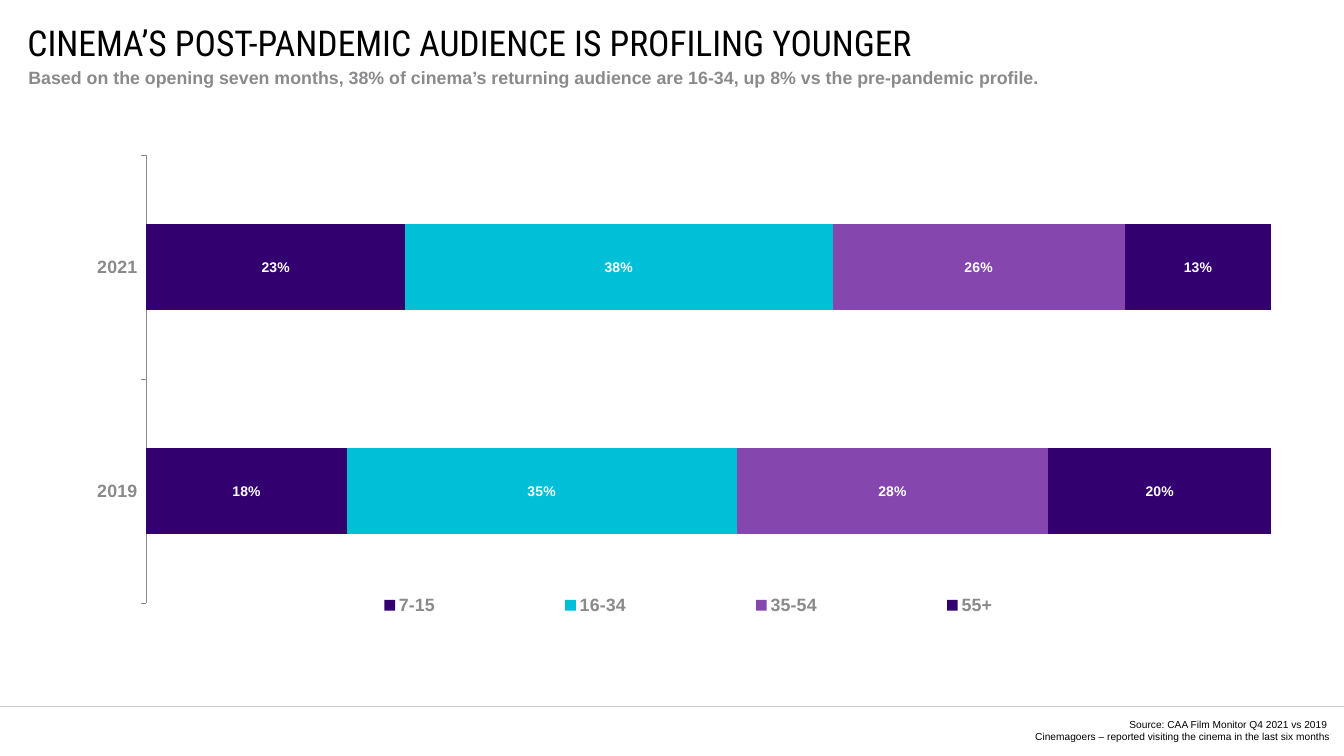
"""Build the slide on the age profile of the cinema audience."""
from lxml import etree
from pptx import Presentation
from pptx.chart.data import CategoryChartData
from pptx.dml.color import RGBColor
from pptx.enum.chart import XL_CHART_TYPE, XL_LEGEND_POSITION, XL_TICK_MARK
from pptx.enum.shapes import MSO_CONNECTOR
from pptx.enum.text import MSO_ANCHOR, PP_ALIGN
from pptx.oxml import parse_xml
from pptx.oxml.ns import nsdecls, qn
from pptx.util import Pt

BAR, BOTTOM = XL_CHART_TYPE.BAR_STACKED_100, XL_LEGEND_POSITION.BOTTOM
TICK_OUT, TICK_NONE = XL_TICK_MARK.OUTSIDE, XL_TICK_MARK.NONE
TOP, MIDDLE = MSO_ANCHOR.TOP, MSO_ANCHOR.MIDDLE
LEFT, RIGHT = PP_ALIGN.LEFT, PP_ALIGN.RIGHT

PX = 9144
SLIDE = (1470, 827)
TITLE = "CINEMA’S POST-PANDEMIC AUDIENCE IS PROFILING YOUNGER"
SUBTITLE = ("Based on the opening seven months, 38% of cinema’s returning audience "
            "are 16-34, up 8% vs the pre-pandemic profile.")
SOURCE = ["Source: CAA Film Monitor Q4 2021 vs 2019 ",
          "Cinemagoers – reported visiting the cinema in the last six months"]
YEARS = ["2021", "2019"]
AGES = [("7-15", (0.23, 0.18), "indigo"), ("16-34", (0.38, 0.35), "cyan"),
        ("35-54", (0.26, 0.28), "purple"), ("55+", (0.13, 0.20), "indigo")]
BOXES = {"title": (30, 30, 1358, 32), "subtitle": (31, 73, 1328, 48),
         "source": (737, 786, 718, 27), "chart": (19, 153, 1398, 599)}
RULE_Y = 773
PLOT = (0.101, 0.028, 0.88, 0.818)
LEGEND = (0.19, 0.82, 0.67, 0.06)

THEME = {
    "colors": {"black": "000000", "grey": "8A8A8D", "rule": "CAC8C8", "white": "FFFFFF",
               "indigo": "33006F", "cyan": "00BFD6", "purple": "8547AD"},
    "fonts": {
        "title": {"name": "Roboto Condensed", "size": Pt(28), "bold": False, "color": "black"},
        "subtitle": {"name": "Arial", "size": Pt(14), "bold": True, "color": "grey"},
        "source": {"name": "Arial", "size": Pt(8), "bold": False, "color": "black"},
        "chart": {"name": "Arial", "size": Pt(10), "bold": False, "color": "black"},
        "axis": {"name": "Arial", "size": Pt(14), "bold": True, "color": "grey"},
        "label": {"name": "Arial", "size": Pt(11), "bold": True, "color": "white"},
    },
}


def rgb(name):
    return RGBColor.from_string(THEME["colors"][name])


def set_font(font, style):
    for key, value in THEME["fonts"][style].items():
        if key == "color":
            font.color.rgb = rgb(value)
        else:
            setattr(font, key, value)


def place(sp, key):
    for attr, value in zip(("left", "top", "width", "height"), BOXES[key]):
        setattr(sp, attr, value * PX)


def write(sp, style, lines, anchor=TOP, align=LEFT, wrap=True):
    place(sp, style)
    tf = sp.text_frame
    layout = {"margin_left": 0, "margin_top": 0, "margin_right": 0, "margin_bottom": 0,
              "vertical_anchor": anchor, "word_wrap": wrap}
    for key, value in layout.items():
        setattr(tf, key, value)
    for i, line in enumerate(lines):
        p = tf.add_paragraph() if i else tf.paragraphs[0]
        p.alignment = align
        r = p.add_run()
        r.text = line
        set_font(r.font, style)


def manual_layout(box, inner=False):
    target = '<c:layoutTarget val="inner"/>' if inner else ""
    modes = "".join(f'<c:{k}Mode val="edge"/>' for k in "xy")
    sizes = "".join(f'<c:{k} val="{v}"/>' for k, v in zip("xywh", box))
    return parse_xml(f'<c:layout {nsdecls("c")}><c:manualLayout>{target}{modes}{sizes}'
                     '</c:manualLayout></c:layout>')


def set_layout(parent, index, layout):
    for old in parent.findall(qn("c:layout")):
        parent.remove(old)
    parent.insert(index, layout)


def add_rule(s):
    line = s.shapes.add_connector(MSO_CONNECTOR.STRAIGHT, 0, RULE_Y * PX,
                                  SLIDE[0] * PX, RULE_Y * PX)
    line.line.color.rgb = rgb("rule")
    line.line.width = Pt(0.5)
    etree.SubElement(line._element.spPr, qn("a:effectLst"))


def add_profile_chart(s):
    data = CategoryChartData(number_format="0%")
    data.categories = YEARS
    for age, shares, _ in AGES:
        data.add_series(age, shares)
    frame = s.shapes.add_chart(BAR, 0, 0, PX, PX, data)
    place(frame, "chart")
    chart = frame.chart
    chart.has_title = False
    set_font(chart.font, "chart")

    axis = chart.category_axis
    axis.reverse_order = True
    axis.major_tick_mark, axis.minor_tick_mark = TICK_OUT, TICK_NONE
    axis.format.line.color.rgb = rgb("grey")
    axis.format.line.width = Pt(0.75)
    set_font(axis.tick_labels.font, "axis")
    chart.value_axis.visible = False
    chart.value_axis.has_major_gridlines = False

    plot = chart.plots[0]
    plot.gap_width, plot.overlap, plot.vary_by_categories = 160, 100, False
    for series, (_, _, color) in zip(plot.series, AGES):
        series.format.fill.solid()
        series.format.fill.fore_color.rgb = rgb(color)
        labels = series.data_labels
        labels.show_value = True
        labels.number_format, labels.number_format_is_linked = "0%", False
        set_font(labels.font, "label")

    chart.has_legend = True
    legend = chart.legend
    legend.position, legend.include_in_layout = BOTTOM, False
    set_font(legend.font, "axis")
    set_layout(legend._element, 1, manual_layout(LEGEND))
    plot_area = chart._chartSpace.chart.plotArea
    set_layout(plot_area, 0, manual_layout(PLOT, inner=True))


def main():
    prs = Presentation()
    prs.slide_width, prs.slide_height = (v * PX for v in SLIDE)
    s = prs.slides.add_slide(prs.slide_layouts[5])
    add_rule(s)
    write(s.shapes.title, "title", [TITLE], anchor=MIDDLE, wrap=False)
    write(s.shapes.add_textbox(0, 0, PX, PX), "subtitle", [SUBTITLE])
    write(s.shapes.add_textbox(0, 0, PX, PX), "source", SOURCE, anchor=MIDDLE, align=RIGHT)
    add_profile_chart(s)
    prs.save("out.pptx")


if __name__ == "__main__":
    main()
